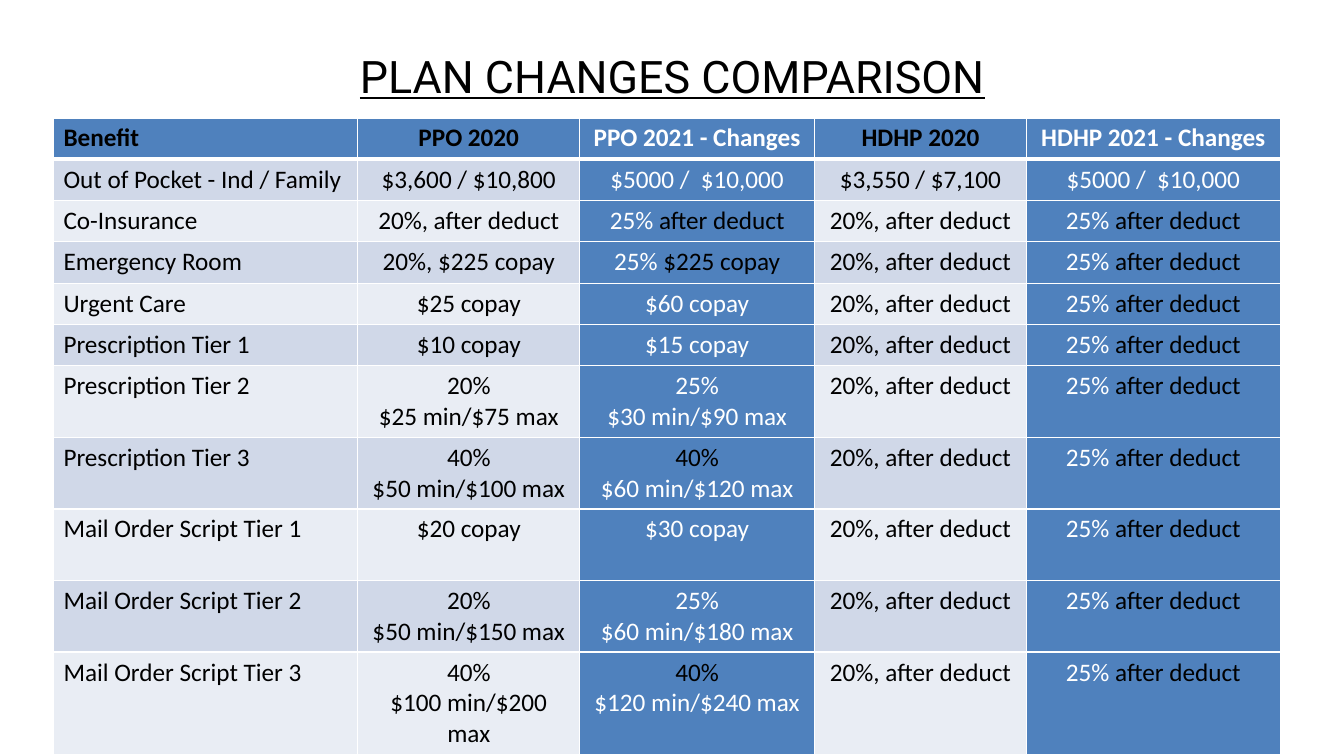
"""Build a slide with a table comparing plan benefits in 2020 and 2021."""
from lxml import etree
from pptx import Presentation
from pptx.dml.color import RGBColor
from pptx.enum.text import MSO_ANCHOR, PP_ALIGN
from pptx.oxml.ns import qn
from pptx.util import Inches, Pt

LEFT, CENTER, MIDDLE = PP_ALIGN.LEFT, PP_ALIGN.CENTER, MSO_ANCHOR.MIDDLE
BLACK, WHITE, BLUE = "000000", "FFFFFF", "4F81BD"
BANDS = ("D0D8E8", "E9EDF4")

TITLE = "PLAN CHANGES COMPARISON"
HEADINGS = ("Benefit", "PPO 2020", "PPO 2021 - Changes", "HDHP 2020", "HDHP 2021 - Changes")
HDHP_2020 = "20%, after deduct"
HDHP_2021 = [("25% ", "after deduct")]

# Each 2021 line is a pair: the changed words, then the words kept from 2020.
BENEFITS = [
    ("Out of Pocket - Ind / Family", "$3,600 / $10,800", [("$5000 /  $10,000", "")],
     "$3,550 / $7,100", [("$5000 /  $10,000", "")]),
    ("Co-Insurance", "20%, after deduct", [("25% ", "after deduct")], HDHP_2020, HDHP_2021),
    ("Emergency Room", "20%, $225 copay", [("25% ", "$225 copay")], HDHP_2020, HDHP_2021),
    ("Urgent Care", "$25 copay", [("$60 copay", "")], HDHP_2020, HDHP_2021),
    ("Prescription Tier 1", "$10 copay", [("$15 copay", "")], HDHP_2020, HDHP_2021),
    ("Prescription Tier 2", "20%\n$25 min/$75 max",
     [("25%", ""), ("$30 min/$90 max", "")], HDHP_2020, HDHP_2021),
    ("Prescription Tier 3", "40%\n$50 min/$100 max",
     [("", "40%"), ("$60 min/$120 max", "")], HDHP_2020, HDHP_2021),
    ("Mail Order Script Tier 1", "$20 copay", [("$30 copay", "")], HDHP_2020, HDHP_2021),
    ("Mail Order Script Tier 2", "20%\n$50 min/$150 max",
     [("25%", ""), ("$60 min/$180 max", "")], HDHP_2020, HDHP_2021),
    ("Mail Order Script Tier 3", "40%\n$100 min/$200 max",
     [("", "40%"), ("$120 min/$240 max", "")], HDHP_2020, HDHP_2021),
]
COLUMN_WIDTHS = (3.02, 2.2, 2.33, 2.1, 2.52)
ROW_HEIGHTS = [0.41] * 6 + [0.71] * 4 + [1.02]
TITLE_FORMAT = {"name": "Roboto", "size": Pt(32), "underline": True}
HEADING_FORMAT = {"name": "Calibri", "size": Pt(18), "bold": True}
BENEFIT_FORMAT = {**HEADING_FORMAT, "bold": False}


def color(target, value):
    target.rgb = RGBColor.from_string(value)


def write(frame, lines, alignment, text_format):
    for index, line in enumerate(lines):
        paragraph = frame.add_paragraph() if index else frame.paragraphs[0]
        paragraph.alignment = alignment
        for words, ink in zip(line, (WHITE, BLACK)):
            if words:
                run = paragraph.add_run()
                run.text = words
                for key, value in text_format.items():
                    setattr(run.font, key, value)
                color(run.font.color, ink)


def border(cell, widths):
    for side, width in widths.items():
        edge = etree.SubElement(cell._tc.get_or_add_tcPr(), qn("a:ln" + side), w=str(Pt(width)))
        fill = etree.SubElement(edge, qn("a:solidFill"))
        etree.SubElement(fill, qn("a:srgbClr"), val=WHITE)


def add_title(slide):
    box = slide.shapes.add_textbox(Inches(0.67), Inches(0.25), Inches(12), Inches(1))
    box.text_frame.word_wrap = True
    box.text_frame.vertical_anchor = MIDDLE
    write(box.text_frame, [("", TITLE)], CENTER, TITLE_FORMAT)


def add_comparison(slide):
    headings = [[(text, "")] if "Changes" in text else text for text in HEADINGS]
    rows = [headings, *BENEFITS]
    table = slide.shapes.add_table(
        len(rows), len(HEADINGS), Inches(0.53), Inches(1.17),
        Inches(sum(COLUMN_WIDTHS)), Inches(sum(ROW_HEIGHTS))).table
    for column, width in zip(table.columns, COLUMN_WIDTHS):
        column.width = Inches(width)
    for r, (row, height) in enumerate(zip(rows, ROW_HEIGHTS)):
        table.rows[r].height = Inches(height)
        for c, content in enumerate(row):
            cell = table.cell(r, c)
            changed = isinstance(content, list)
            lines = content if changed else [("", text) for text in content.split("\n")]
            write(cell.text_frame, lines, CENTER if c else LEFT,
                  BENEFIT_FORMAT if r else HEADING_FORMAT)
            border(cell, {"L": 1, "R": 1, "T": 3 if r == 1 else 1, "B": 1 if r else 3})
            cell.fill.solid()
            color(cell.fill.fore_color, BLUE if changed or r == 0 else BANDS[(r - 1) % 2])


def main():
    deck = Presentation()
    deck.slide_width, deck.slide_height = Inches(13.33), Inches(7.5)
    slide = deck.slides.add_slide(deck.slide_layouts[6])
    add_title(slide)
    add_comparison(slide)
    deck.save("out.pptx")


if __name__ == "__main__":
    main()
